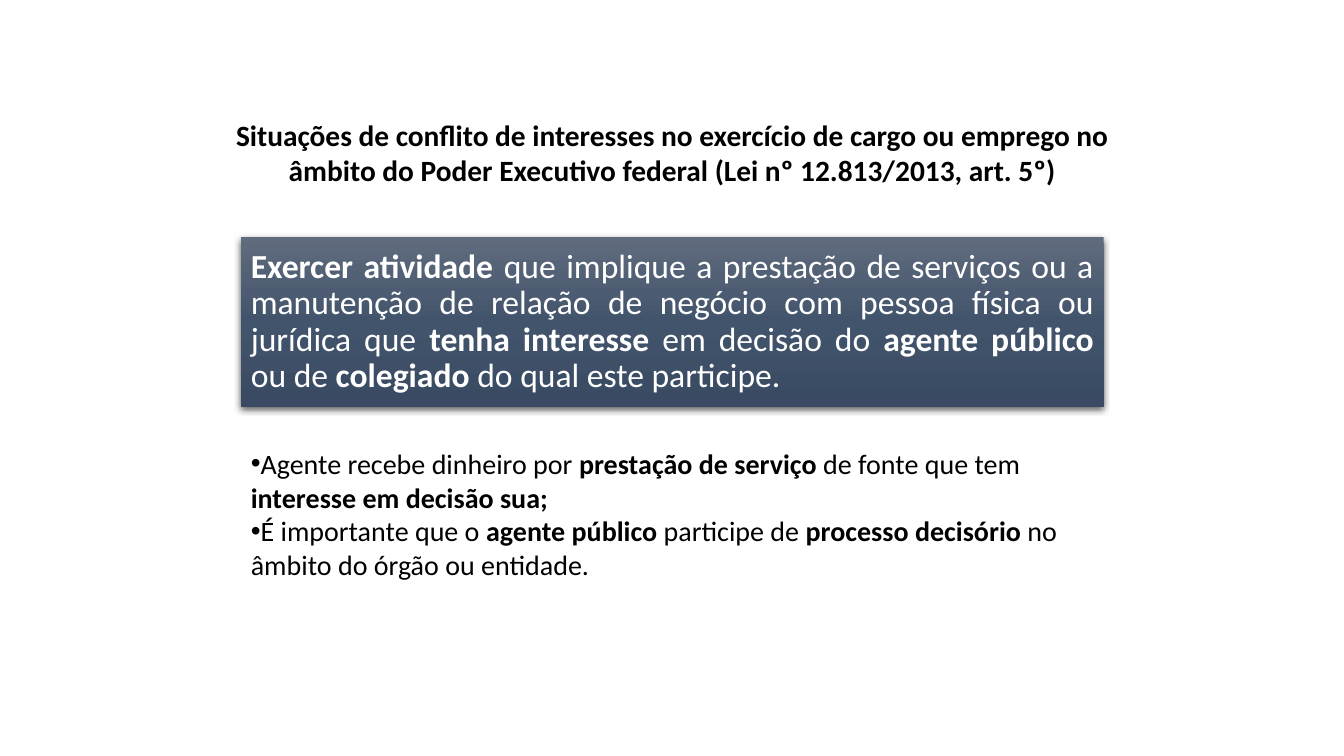
from dataclasses import dataclass

from lxml.etree import SubElement
from pptx import Presentation
from pptx.dml.color import RGBColor
from pptx.enum.shapes import MSO_SHAPE
from pptx.enum.text import MSO_ANCHOR, MSO_AUTO_SIZE, PP_ALIGN
from pptx.oxml import parse_xml
from pptx.oxml.ns import nsdecls, qn
from pptx.util import Pt


@dataclass(frozen=True)
class Theme:
    font: str = "Calibri"
    ink: str = "000000"
    inverse: str = "FFFFFF"
    gradient: tuple = ((0, "606B7D"), (50, "42546C"), (100, "394A62"))
    title_size: float = 21
    rule_size: float = 24
    note_size: float = 20


class SlideBuilder:
    def __init__(self, slide, theme):
        self.slide = slide
        self.theme = theme

    def set_text(self, paragraph, text, size, color, align=PP_ALIGN.LEFT):
        """Fill a paragraph; parts between ** marks are bold."""
        paragraph.alignment = align
        paragraph.font.name = self.theme.font
        paragraph.font.size = Pt(size)
        paragraph.font.color.rgb = RGBColor.from_string(color)
        for index, part in enumerate(text.split("**")):
            if part:
                run = paragraph.add_run()
                run.text = part
                run.font.bold = index % 2 == 1

    def frame(self, shape, anchor, inset_x, inset_y):
        frame = shape.text_frame
        frame.word_wrap = True
        frame.vertical_anchor = anchor
        frame.margin_left = frame.margin_right = Pt(inset_x)
        frame.margin_top = frame.margin_bottom = Pt(inset_y)
        return frame

    def title(self, text, left, top, width, height):
        heading = self.slide.shapes.add_textbox(Pt(left), Pt(top), Pt(width), Pt(height))
        frame = self.frame(heading, MSO_ANCHOR.MIDDLE, 5, 3)
        self.set_text(frame.paragraphs[0], f"**{text}**", self.theme.title_size,
                      self.theme.ink, PP_ALIGN.CENTER)

    def rule_panel(self, text, left, top, width, height):
        panel = self.slide.shapes.add_shape(
            MSO_SHAPE.RECTANGLE, Pt(left), Pt(top), Pt(width), Pt(height))
        panel.line.fill.background()
        self.shade(panel)
        frame = self.frame(panel, MSO_ANCHOR.MIDDLE, 7.2, 7.2)
        paragraph = frame.paragraphs[0]
        paragraph.line_spacing = 0.9
        self.set_text(paragraph, text, self.theme.rule_size, self.theme.inverse,
                      PP_ALIGN.JUSTIFY)

    def shade(self, panel):
        """Give the panel a top-down gradient and a soft shadow below."""
        stops = "".join(
            f'<a:gs pos="{position * 1000}"><a:srgbClr val="{color}"/></a:gs>'
            for position, color in self.theme.gradient)
        gradient = parse_xml(
            f'<a:gradFill {nsdecls("a")} rotWithShape="1"><a:gsLst>{stops}</a:gsLst>'
            '<a:lin ang="5400000" scaled="0"/></a:gradFill>')
        shadow = parse_xml(
            f'<a:effectLst {nsdecls("a")}><a:outerShdw blurRad="{Pt(4.5)}" '
            f'dist="{Pt(1.5)}" dir="5400000" algn="ctr" rotWithShape="0">'
            f'<a:srgbClr val="{self.theme.ink}"><a:alpha val="63000"/></a:srgbClr>'
            '</a:outerShdw></a:effectLst>')
        properties = panel.element.spPr
        properties.find(qn("a:prstGeom")).addnext(gradient)
        properties.append(shadow)

    def bullets(self, notes, left, top, width, height):
        box = self.slide.shapes.add_textbox(Pt(left), Pt(top), Pt(width), Pt(height))
        frame = self.frame(box, MSO_ANCHOR.TOP, 7.2, 3.6)
        frame.auto_size = MSO_AUTO_SIZE.SHAPE_TO_FIT_TEXT
        for index, note in enumerate(notes):
            paragraph = frame.add_paragraph() if index else frame.paragraphs[0]
            properties = paragraph._p.get_or_add_pPr()
            properties.set("marL", "0")
            properties.set("indent", str(Pt(-22.5)))
            SubElement(properties, qn("a:buFont"), typeface="Arial")
            SubElement(properties, qn("a:buChar"), char="•")
            self.set_text(paragraph, note, self.theme.note_size, self.theme.ink)


def main():
    presentation = Presentation()
    presentation.slide_width = Pt(960)
    presentation.slide_height = Pt(540)
    slide = presentation.slides.add_slide(presentation.slide_layouts[6])
    builder = SlideBuilder(slide, Theme())
    left, width = 172.1, 616.3

    builder.title(
        "Situações de conflito de interesses no exercício de cargo ou emprego no "
        "âmbito do Poder Executivo federal (Lei nº 12.813/2013, art. 5º)",
        161.3, 84.2, 637.9, 49)
    builder.rule_panel(
        "**Exercer atividade** que implique a prestação de serviços ou a manutenção "
        "de relação de negócio com pessoa física ou jurídica que **tenha interesse** "
        "em decisão do **agente público** ou de **colegiado** do qual este participe.",
        left, 169.2, width, 121.7)
    builder.bullets(
        ["Agente recebe dinheiro por **prestação de serviço** de fonte que tem "
         "**interesse em decisão sua;**",
         "É importante que o **agente público **participe de **processo decisório** "
         "no âmbito do órgão ou entidade."],
        left, 315.4, width, 104.4)
    presentation.save("out.pptx")


if __name__ == "__main__":
    main()
